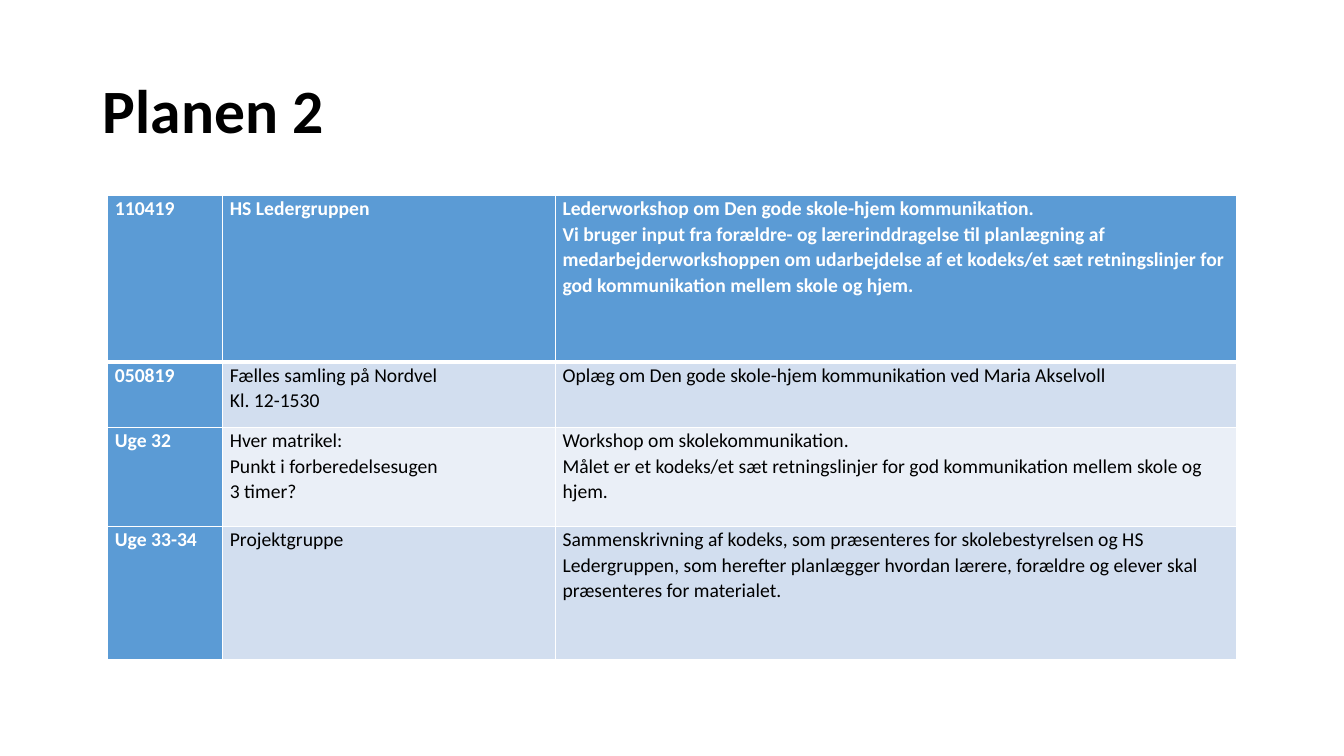
from dataclasses import dataclass

from lxml import etree
from pptx import Presentation
from pptx import util as u
from pptx.dml.color import RGBColor
from pptx.enum import text
from pptx.oxml import ns
from pptx.slide import Slide
from pptx.table import Table, _Cell
from pptx.text.text import _Paragraph

BLACK = RGBColor(0x00, 0x00, 0x00)
WHITE = RGBColor(0xFF, 0xFF, 0xFF)
BLUE = RGBColor(0x5B, 0x9B, 0xD5)
BAND_DARK = RGBColor(0xD2, 0xDE, 0xEF)
BAND_LIGHT = RGBColor(0xEA, 0xEF, 0xF7)

COLUMN_WIDTHS = (1.14, 3.3, 6.75)
CELL_FORMAT = {
    "margin_left": u.Inches(0.07),
    "margin_right": u.Inches(0.07),
    "margin_top": u.Inches(0),
    "margin_bottom": u.Inches(0),
    "vertical_anchor": text.MSO_ANCHOR.TOP,
}


@dataclass(frozen=True)
class PlanStep:
    height: float
    date: str
    group: str
    activity: str


PLAN = (
    PlanStep(
        1.65,
        "110419",
        "HS Ledergruppen",
        "Lederworkshop om Den gode skole-hjem kommunikation.\n"
        "Vi bruger input fra forældre- og lærerinddragelse til planlægning af "
        "medarbejderworkshoppen om udarbejdelse af et kodeks/et sæt retningslinjer "
        "for god kommunikation mellem skole og hjem.",
    ),
    PlanStep(
        0.65,
        "050819",
        "Fælles samling på Nordvel\nKl. 12-1530",
        "Oplæg om Den gode skole-hjem kommunikation ved Maria Akselvoll",
    ),
    PlanStep(
        0.98,
        "Uge 32",
        "Hver matrikel:\nPunkt i forberedelsesugen\n3 timer?",
        "Workshop om skolekommunikation.\n"
        "Målet er et kodeks/et sæt retningslinjer for god kommunikation mellem "
        "skole og hjem.",
    ),
    PlanStep(
        1.32,
        "Uge 33-34",
        "Projektgruppe",
        "Sammenskrivning af kodeks, som præsenteres for skolebestyrelsen og HS "
        "Ledergruppen, som herefter planlægger hvordan lærere, forældre og elever "
        "skal præsenteres for materialet.",
    ),
)


def apply_format(target: object, values: dict[str, object]) -> None:
    for attribute, value in values.items():
        setattr(target, attribute, value)


def format_paragraph(
    paragraph: _Paragraph, size: float, color: RGBColor, bold: bool, spacing: float
) -> None:
    apply_format(
        paragraph, {"alignment": text.PP_ALIGN.LEFT, "line_spacing": spacing}
    )
    for run in paragraph.runs:
        apply_format(
            run.font, {"name": "Calibri", "size": u.Pt(size), "bold": bold}
        )
        run.font.color.rgb = color


def add_borders(cell: _Cell, row: int) -> None:
    properties = cell._tc.get_or_add_tcPr()
    widths = {
        "a:lnL": 1,
        "a:lnR": 1,
        "a:lnT": 3 if row == 1 else 1,
        "a:lnB": 3 if row == 0 else 1,
    }
    for side, width in widths.items():
        border = etree.SubElement(properties, ns.qn(side), w=str(u.Pt(width)))
        fill = etree.SubElement(border, ns.qn("a:solidFill"))
        etree.SubElement(fill, ns.qn("a:srgbClr"), val=str(WHITE))


def fill_cell(table: Table, row: int, column: int, wording: str) -> None:
    cell = table.cell(row, column)
    heading = row == 0 or column == 0
    band = BAND_DARK if row % 2 else BAND_LIGHT
    cell.text = wording
    apply_format(cell, CELL_FORMAT)
    add_borders(cell, row)
    cell.fill.solid()
    cell.fill.fore_color.rgb = BLUE if heading else band
    for paragraph in cell.text_frame.paragraphs:
        format_paragraph(paragraph, 14, WHITE if heading else BLACK, heading, 1.07)


def add_title(slide: Slide, wording: str) -> None:
    title = slide.shapes.title
    apply_format(
        title,
        {
            "left": u.Inches(0.92),
            "top": u.Inches(0.4),
            "width": u.Inches(11.5),
            "height": u.Inches(1.45),
        },
    )
    title.text_frame.text = wording
    title.text_frame.vertical_anchor = text.MSO_ANCHOR.MIDDLE
    format_paragraph(title.text_frame.paragraphs[0], 44, BLACK, True, 0.9)


def add_plan(slide: Slide) -> None:
    plan = slide.shapes.add_table(
        len(PLAN),
        len(COLUMN_WIDTHS),
        u.Inches(1.07),
        u.Inches(1.94),
        u.Inches(sum(COLUMN_WIDTHS)),
        u.Inches(sum(step.height for step in PLAN)),
    ).table
    plan.first_col = True
    for column, width in enumerate(COLUMN_WIDTHS):
        plan.columns[column].width = u.Inches(width)
    for row, step in enumerate(PLAN):
        plan.rows[row].height = u.Inches(step.height)
        for column, wording in enumerate((step.date, step.group, step.activity)):
            fill_cell(plan, row, column, wording)


def main() -> None:
    presentation = Presentation()
    presentation.slide_width = u.Inches(13.33)
    presentation.slide_height = u.Inches(7.5)
    slide = presentation.slides.add_slide(presentation.slide_layouts[5])
    add_title(slide, "Planen 2")
    add_plan(slide)
    presentation.save("out.pptx")


if __name__ == "__main__":
    main()
